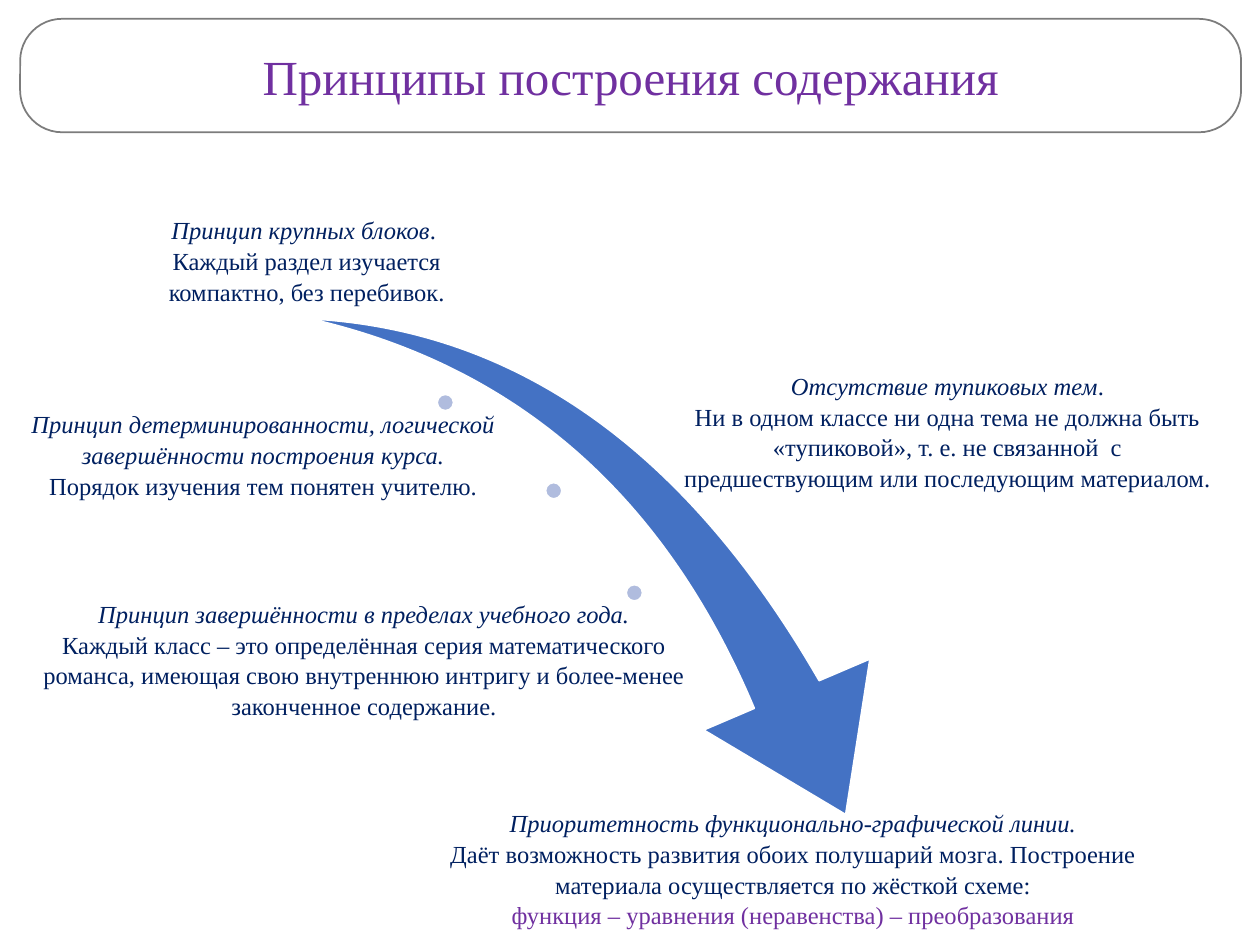
from pptx import Presentation
from pptx.dml.color import RGBColor
from pptx.enum.shapes import MSO_SHAPE as Shape
from pptx.enum.text import MSO_ANCHOR as Anchor, PP_ALIGN as Align
from pptx.util import Inches, Pt

WHITE = RGBColor(0xFF, 0xFF, 0xFF)
GRAY = RGBColor(0x7C, 0x7C, 0x7C)
BLUE = RGBColor(0x44, 0x72, 0xC4)
PALE_BLUE = RGBColor(0xB0, 0xBC, 0xDE)
NAVY = RGBColor(0x00, 0x20, 0x60)
PURPLE = RGBColor(0x70, 0x30, 0xA0)
FONT = "Times New Roman"

# Content
TITLE = "Принципы построения содержания"
DOT_SIZE = 0.13
DOTS = [(3.47, 3.13), (4.33, 3.83), (4.97, 4.64)]
# Each principle: box, anchor, italic name, plain mark after it, explanation, closing scheme
PRINCIPLES = [
    ((1.26, 1.53, 2.35, 0.92), Anchor.BOTTOM,
     "Принцип крупных блоков", ". ",
     "Каждый раздел изучается компактно, без перебивок.", ""),
    ((5.34, 2.88, 4.36, 1.08), Anchor.MIDDLE,
     "Отсутствие тупиковых тем", ".",
     "Ни в одном классе ни одна тема не должна быть «тупиковой», т. е. не связанной  с "
     "предшествующим или последующим материалом.", ""),
    ((0.16, 2.96, 3.86, 1.29), Anchor.MIDDLE,
     "Принцип детерминированности, логической завершённости построения курса.", "",
     "Порядок изучения тем понятен учителю.", ""),
    ((0.16, 4.77, 5.46, 0.92), Anchor.MIDDLE,
     "Принцип завершённости в пределах учебного года.", "",
     "Каждый класс – это определённая серия математического романса, имеющая свою "
     "внутреннюю интригу и более-менее законченное содержание.", ""),
    ((3.17, 6.38, 6.25, 0.92), Anchor.TOP,
     "Приоритетность функционально-графической линии.", "",
     "Даёт возможность развития обоих полушарий мозга. Построение материала "
     "осуществляется по жёсткой схеме:",
     "функция – уравнения (неравенства) – преобразования"),
]


def add_text(paragraph, text, size=14, color=NAVY, italic=False):
    paragraph.alignment = Align.CENTER
    run = paragraph.add_run()
    run.text = text
    run.font.name = FONT
    run.font.size = Pt(size)
    run.font.italic = italic
    run.font.color.rgb = color


def set_frame(shape, anchor, inset_x, inset_y):
    frame = shape.text_frame
    frame.word_wrap = True
    frame.vertical_anchor = anchor
    frame.margin_left = frame.margin_right = Inches(inset_x)
    frame.margin_top = frame.margin_bottom = Inches(inset_y)
    return frame


def add_shape(slide, kind, box, fill, line, adjustments=()):
    shape = slide.shapes.add_shape(kind, *map(Inches, box))
    shape.shadow.inherit = False
    shape.fill.solid()
    shape.fill.fore_color.rgb = fill
    shape.line.color.rgb = line
    shape.line.width = Pt(1)
    for index, value in enumerate(adjustments):
        shape.adjustments[index] = value
    return shape


def add_principle(slide, box, anchor, name, mark, explanation, scheme):
    frame = set_frame(slide.shapes.add_textbox(*map(Inches, box)), anchor, 0.02, 0.02)
    heading = frame.paragraphs[0]
    add_text(heading, name, italic=True)
    if mark:
        add_text(heading, mark)
    add_text(frame.add_paragraph(), explanation)
    if scheme:
        add_text(frame.add_paragraph(), scheme, color=PURPLE)
    for paragraph in frame.paragraphs:
        paragraph.line_spacing = 1.05


def main():
    presentation = Presentation()
    presentation.slide_width, presentation.slide_height = Inches(10), Inches(7.5)
    slide = presentation.slides.add_slide(presentation.slide_layouts[6])

    # Title panel
    panel = add_shape(slide, Shape.ROUNDED_RECTANGLE, (0.16, 0.15, 9.69, 0.9),
                      WHITE, GRAY, [0.37])
    frame = set_frame(panel, Anchor.MIDDLE, 0.28, 0.12)
    add_text(frame.paragraphs[0], TITLE, size=28, color=PURPLE)

    # Curved arrow with its dots
    arrow = add_shape(slide, Shape.SWOOSH_ARROW, (2.35, 2.68, 4.99, 3.48),
                      BLUE, WHITE, [0.16, 0.31])
    arrow.rotation = 73.3
    for left, top in DOTS:
        add_shape(slide, Shape.OVAL, (left, top, DOT_SIZE, DOT_SIZE), PALE_BLUE, WHITE)

    # Principles around the arrow
    for principle in PRINCIPLES:
        add_principle(slide, *principle)

    presentation.save("out.pptx")


if __name__ == "__main__":
    main()
